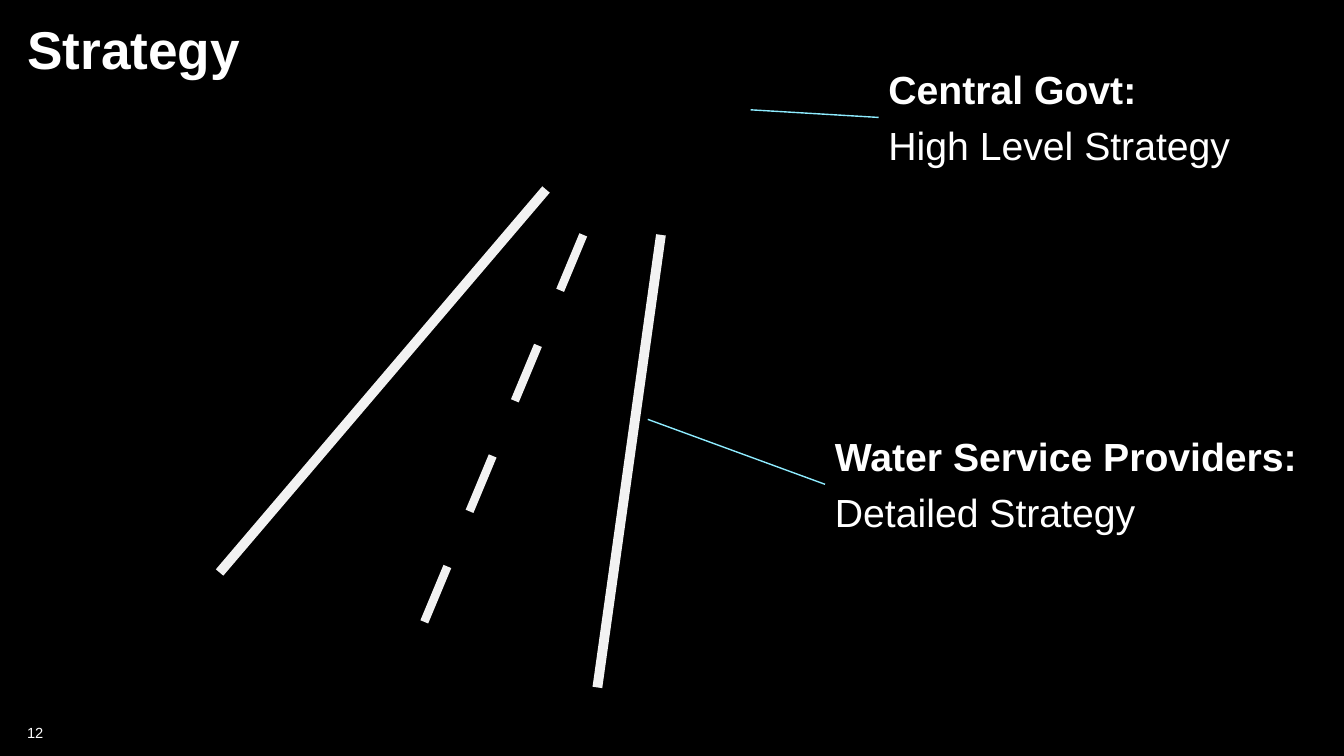
from dataclasses import dataclass

from lxml import etree
from pptx import Presentation
from pptx import util as u
from pptx.dml.color import RGBColor
from pptx.enum import shapes, text
from pptx.oxml.ns import qn


@dataclass(frozen=True)
class Theme:
    font: str = "Arial"
    background: str = "000000"
    ink: str = "FFFFFF"
    road: str = "F2F2F2"
    pointer: str = "8EECFF"
    title: float = 38
    body: float = 28
    small: float = 10.5
    edge: float = 7
    dash: float = 6
    hairline: float = 1


THEME = Theme()
WIDTH, HEIGHT = u.Inches(13.34), u.Inches(7.5)
MARGIN = 2.02


def across(share):
    """Length for a percentage of the slide's width."""
    return round(WIDTH * share / 100)


def down(share):
    """Length for a percentage of the slide's height."""
    return round(HEIGHT * share / 100)


def add_text(s, lines, x, y, w, h, size=THEME.body, bold_first=False, inset=None,
             before=3, after=3, spacing=None, anchor=text.MSO_ANCHOR.TOP):
    sp = s.shapes.add_textbox(across(x), down(y), across(w), down(h))
    tf = sp.text_frame
    tf.word_wrap = True
    tf.vertical_anchor = anchor
    if inset is not None:
        tf.margin_left = tf.margin_right = tf.margin_top = tf.margin_bottom = inset
    for i, line in enumerate(lines):
        p = tf.add_paragraph() if i else tf.paragraphs[0]
        p.space_before, p.space_after = u.Pt(before), u.Pt(after)
        p.line_spacing = spacing
        r = p.add_run()
        r.text = line
        r.font.name, r.font.size = THEME.font, u.Pt(size)
        r.font.bold = bold_first and i == 0
        r.font.color.rgb = RGBColor.from_string(THEME.ink)
    return sp


def add_line(parent, start, end, color, width):
    (x1, y1), (x2, y2) = start, end
    line = parent.shapes.add_connector(shapes.MSO_CONNECTOR.STRAIGHT, across(x1), down(y1),
                                       across(x2), down(y2))
    line.line.color.rgb = RGBColor.from_string(color)
    line.line.width = u.Pt(width)
    etree.SubElement(line._element.spPr, qn("a:effectLst"))


def add_road(s):
    """Two edges and a dashed centre line, held in one group."""
    road = s.shapes.add_group_shape()
    for start, end in [((40.63, 25.07), (16.34, 75.73)), ((44.45, 90.93), (49.18, 31.07))]:
        add_line(road, start, end, THEME.road, THEME.edge)
    for i in range(4):
        x, y = 43.4 - 3.37 * i, 31.07 + 14.62 * i
        add_line(road, (x, y), (x - 1.72, y + 7.33), THEME.road, THEME.dash)


def add_callout(s, heading, detail, x, y, w, target):
    """Label whose left middle is joined to the target point."""
    h = 15.07
    add_text(s, [heading, detail], x, y, w, h, bold_first=True)
    add_line(s, target, (x, y + h / 2), THEME.pointer, THEME.hairline)


def main():
    prs = Presentation()
    prs.slide_width, prs.slide_height = WIDTH, HEIGHT
    s = prs.slides.add_slide(prs.slide_layouts[6])
    fill = s.background.fill
    fill.solid()
    fill.fore_color.rgb = RGBColor.from_string(THEME.background)

    add_text(s, ["Strategy"], MARGIN, 3.07, 95.95, 7.73, size=THEME.title,
             bold_first=True, inset=0, before=0, after=6, spacing=0.9)
    add_text(s, ["12"], MARGIN, 95.33, 4.27, 3.2, size=THEME.small, inset=0,
             anchor=text.MSO_ANCHOR.MIDDLE)
    add_road(s)
    add_callout(s, "Central Govt:", "High Level Strategy", 65.37, 8, 28.56, (55.85, 14.53))
    add_callout(s, "Water Service Providers:", "Detailed Strategy", 61.39, 56.53, 36.58,
                (48.2, 55.47))
    prs.save("out.pptx")


if __name__ == "__main__":
    main()
